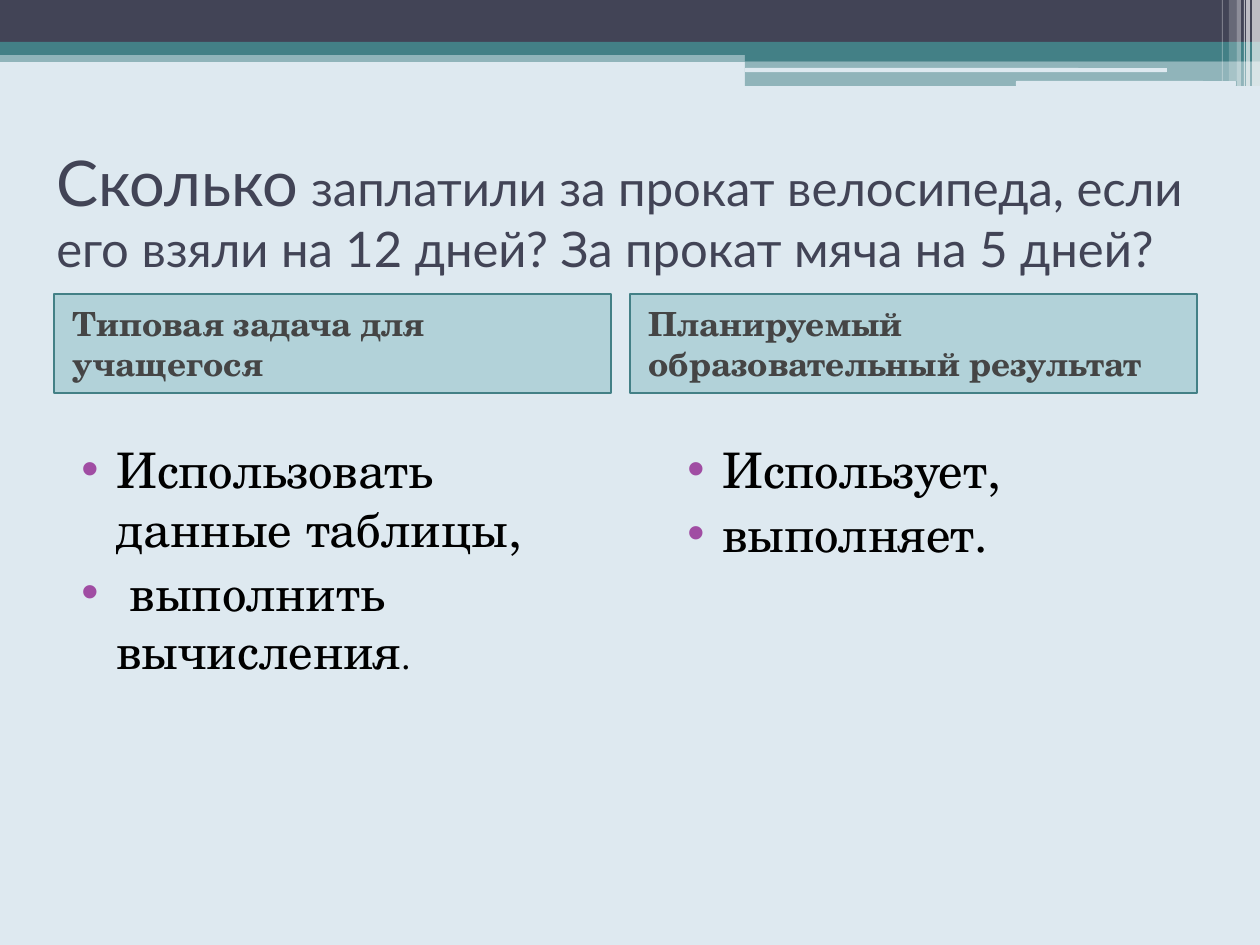
"""Builds the slide on the bicycle hire problem and its planned learning results."""
from lxml import etree
from pptx import Presentation
from pptx.dml.color import RGBColor
from pptx.enum.shapes import MSO_SHAPE
from pptx.enum.text import MSO_ANCHOR
from pptx.oxml.ns import qn
from pptx.util import Pt

RECT, ROUND = MSO_SHAPE.RECTANGLE, MSO_SHAPE.ROUNDED_RECTANGLE
MIDDLE = MSO_ANCHOR.MIDDLE
PX = 914400 / 126
HEAD_FONT, BODY_FONT = "Lato", "TeX Gyre Schola"
COLORS = {
    "bg": "DEE9F0", "dark": "424456", "teal": "438086", "white": "FFFFFF",
    "box": "328E97", "label": "454545", "text": "000000", "bullet": "A04DA3",
}


def rgb(name):
    return RGBColor.from_string(COLORS[name])


def add_box(kind, box, color, alpha=100):
    sp = s.shapes.add_shape(kind, *[round(v * PX) for v in box])
    sp.shadow.inherit = False
    sp.fill.solid()
    sp.fill.fore_color.rgb = rgb(color)
    sp.line.fill.background()
    if alpha < 100:
        clr = sp.fill._xPr.find(qn("a:solidFill"))[0]
        etree.SubElement(clr, qn("a:alpha"), val=str(alpha * 1000))
    return sp


prs = Presentation()
prs.slide_width, prs.slide_height = round(1260 * PX), round(945 * PX)
s = prs.slides.add_slide(prs.slide_layouts[6])
s.background.fill.solid()
s.background.fill.fore_color.rgb = rgb("bg")

for kind, box, color, alpha in [
    (RECT, (0, 50, 1260, 12), "teal", 50),
    (RECT, (0, 0, 1260, 42), "dark", 100),
    (RECT, (0, 42, 1260, 13), "teal", 100),
    (RECT, (745, 49, 515, 12), "teal", 100),
    (RECT, (745, 61, 515, 25), "teal", 50),
    (ROUND, (745, 68, 422, 4), "bg", 100),
    (ROUND, (1016, 81, 220, 5), "bg", 100),
]:
    add_box(kind, box, color, alpha)

for x, w, h, alpha in [
    (1252, 8, 86, 65), (1246, 4, 86, 65), (1244, 1, 86, 60),
    (1237, 4, 86, 40), (1229, 8, 81, 20), (1222, 1, 81, 30),
]:
    add_box(RECT, (x, 0, w, h), "white", alpha)

sp = s.shapes.add_textbox(*[round(v * PX) for v in (44, 116, 1163, 189)])
tf = sp.text_frame
tf.word_wrap = True
tf.vertical_anchor = MIDDLE
p = tf.paragraphs[0]
p.font.name = HEAD_FONT
p.font.color.rgb = rgb("dark")
for text, size in [
    ("Сколько", 36),
    (" заплатили за прокат велосипеда, если его взяли на 12 дней? "
     "За прокат мяча на 5 дней?", 28),
]:
    r = p.add_run()
    r.text = text
    r.font.size = Pt(size)

for x, w, text in [
    (54, 557, "Типовая задача для учащегося"),
    (630, 567, "Планируемый образовательный результат"),
]:
    sp = add_box(RECT, (x, 294, w, 99), "box", 25)
    sp.line.color.rgb = rgb("teal")
    sp.line.width = Pt(1)
    tf = sp.text_frame
    tf.word_wrap = True
    tf.vertical_anchor = MIDDLE
    p = tf.paragraphs[0]
    p.text = text
    p.space_before = Pt(3)
    p._p.get_or_add_pPr().set("marL", str(round(6 * PX)))
    p._p.get_or_add_pPr().set("algn", "l")
    p.font.name, p.font.size, p.font.bold = BODY_FONT, Pt(19), True
    p.font.color.rgb = rgb("label")

for x, items in [
    (54, [[("Использовать данные таблицы,", 28)],
          [(" выполнить вычисления", 28), (".", 20)]]),
    (660, [[("Использует,", 28)], [("выполняет.", 28)]]),
]:
    sp = s.shapes.add_textbox(*[round(v * PX) for v in (x, 433, 557, 536)])
    tf = sp.text_frame
    tf.word_wrap = True
    for i, runs in enumerate(items):
        p = tf.add_paragraph() if i else tf.paragraphs[0]
        p.space_before = Pt(3)
        p.font.name = BODY_FONT
        p.font.color.rgb = rgb("text")
        for text, size in runs:
            r = p.add_run()
            r.text = text
            r.font.size = Pt(size)
        pPr = p._p.get_or_add_pPr()
        pPr.set("marL", str(round(50 * PX)))
        pPr.set("indent", str(round(-35 * PX)))
        clr = etree.Element(qn("a:buClr"))
        etree.SubElement(clr, qn("a:srgbClr"), val=COLORS["bullet"])
        font = etree.Element(qn("a:buFont"), typeface="Arial")
        char = etree.Element(qn("a:buChar"), char="•")
        spacing = pPr.find(qn("a:spcBef"))
        for el in (char, font, clr):
            spacing.addnext(el)

prs.save("out.pptx")
